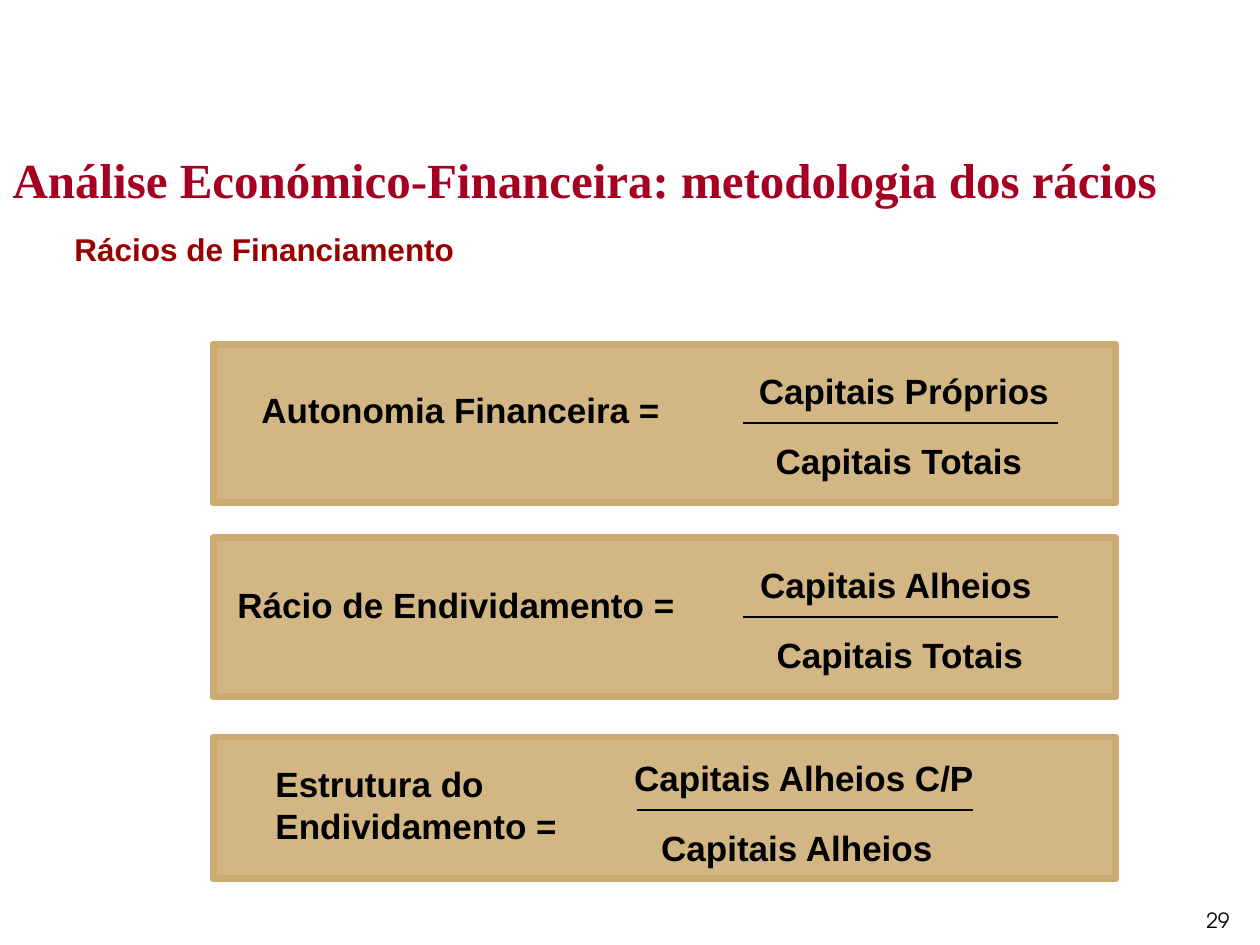
from dataclasses import dataclass
from lxml.etree import SubElement
from pptx import Presentation
from pptx.dml.color import RGBColor
from pptx.enum.shapes import MSO_CONNECTOR as Connector, MSO_SHAPE as Shape
from pptx.enum.text import MSO_ANCHOR as Anchor, PP_ALIGN as Align
from pptx.oxml.ns import qn
from pptx.util import Emu, Pt

PX_PER_INCH = 126


def px(count: int) -> Emu:
    return Emu(round(count * 914400 / PX_PER_INCH))


@dataclass(frozen=True)
class TextStyle:
    font: str
    size: int
    color: str
    bold: bool = True
    spacing: float = 1.0


@dataclass(frozen=True)
class Theme:
    title: TextStyle = TextStyle("Times New Roman", 28, "A50021", spacing=0.9)
    subtitle: TextStyle = TextStyle("Arial", 18, "990000", spacing=0.9)
    formula: TextStyle = TextStyle("Arial", 20, "000000")
    number: TextStyle = TextStyle("TeX Gyre Adventor", 12, "000000", bold=False)
    panel_fill: str = "D2B684"
    panel_line: str = "CBAB71"
    bar: str = "000000"


@dataclass(frozen=True)
class Box:
    left: int
    top: int
    width: int
    height: int


@dataclass(frozen=True)
class Ratio:
    panel: Box
    name: str
    name_box: Box
    numerator: str
    numerator_center: int
    denominator: str
    denominator_center: int
    bar_left: int
    bar_right: int
    bar_y: int


THEME = Theme()
TERM_WIDTH, TERM_HEIGHT = 388, 54
NUMERATOR_RISE, DENOMINATOR_DROP = 60, 10

RATIOS = (
    Ratio(Box(213, 344, 903, 159), "Autonomia Financeira =", Box(249, 382, 460, 54),
          "Capitais Próprios", 904, "Capitais Totais", 899, 743, 1058, 423),
    Ratio(Box(213, 538, 903, 159), "Rácio de Endividamento =", Box(225, 577, 490, 54),
          "Capitais Alheios", 896, "Capitais Totais", 900, 743, 1058, 617),
    Ratio(Box(213, 737, 903, 142), "Estrutura do Endividamento =", Box(263, 756, 357, 96),
          "Capitais Alheios C/P", 804, "Capitais Alheios", 797, 637, 973, 810),
)


def place(shape, box: Box) -> None:
    shape.left, shape.top = px(box.left), px(box.top)
    shape.width, shape.height = px(box.width), px(box.height)


def write(frame, text: str, style: TextStyle, align=Align.LEFT, anchor=Anchor.TOP) -> None:
    frame.word_wrap = True
    frame.vertical_anchor = anchor
    paragraph = frame.paragraphs[0]
    paragraph.alignment = align
    paragraph.line_spacing = style.spacing
    run = paragraph.add_run()
    run.text = text
    run.font.name = style.font
    run.font.size = Pt(style.size)
    run.font.bold = style.bold
    run.font.color.rgb = RGBColor.from_string(style.color)


def add_text(slide, box: Box, text: str, style: TextStyle, align=Align.LEFT) -> None:
    label = slide.shapes.add_textbox(0, 0, 0, 0)
    place(label, box)
    write(label.text_frame, text, style, align)


def add_panel(slide, box: Box) -> None:
    panel = slide.shapes.add_shape(Shape.RECTANGLE, 0, 0, 0, 0)
    place(panel, box)
    panel.shadow.inherit = False
    panel.fill.solid()
    panel.fill.fore_color.rgb = RGBColor.from_string(THEME.panel_fill)
    panel.line.color.rgb = RGBColor.from_string(THEME.panel_line)
    panel.line.width = Pt(4)


def add_bar(slide, left: int, right: int, y: int) -> None:
    bar = slide.shapes.add_connector(Connector.STRAIGHT, px(left), px(y), px(right), px(y))
    bar.line.color.rgb = RGBColor.from_string(THEME.bar)
    bar.line.width = Pt(0.75)
    SubElement(bar._element.spPr, qn("a:effectLst"))


def add_term(slide, text: str, center: int, top: int) -> None:
    box = Box(center - TERM_WIDTH // 2, top, TERM_WIDTH, TERM_HEIGHT)
    add_text(slide, box, text, THEME.formula, Align.CENTER)


def add_ratio(slide, ratio: Ratio) -> None:
    add_panel(slide, ratio.panel)
    add_text(slide, ratio.name_box, ratio.name, THEME.formula)
    add_term(slide, ratio.numerator, ratio.numerator_center, ratio.bar_y - NUMERATOR_RISE)
    add_bar(slide, ratio.bar_left, ratio.bar_right, ratio.bar_y)
    add_term(slide, ratio.denominator, ratio.denominator_center,
             ratio.bar_y + DENOMINATOR_DROP)


def main() -> None:
    deck = Presentation()
    deck.slide_width, deck.slide_height = px(1260), px(945)
    slide = deck.slides.add_slide(deck.slide_layouts[5])

    # Headings
    title = slide.shapes.title
    place(title, Box(0, 150, 1260, 66))
    write(title.text_frame, "Análise Económico-Financeira: metodologia dos rácios",
          THEME.title, anchor=Anchor.MIDDLE)
    add_text(slide, Box(62, 228, 1164, 58), "Rácios de Financiamento", THEME.subtitle)

    # Financing ratios
    for ratio in RATIOS:
        add_ratio(slide, ratio)

    # Page number
    add_text(slide, Box(980, 901, 262, 32), "29", THEME.number, Align.RIGHT)

    deck.save("out.pptx")


if __name__ == "__main__":
    main()
